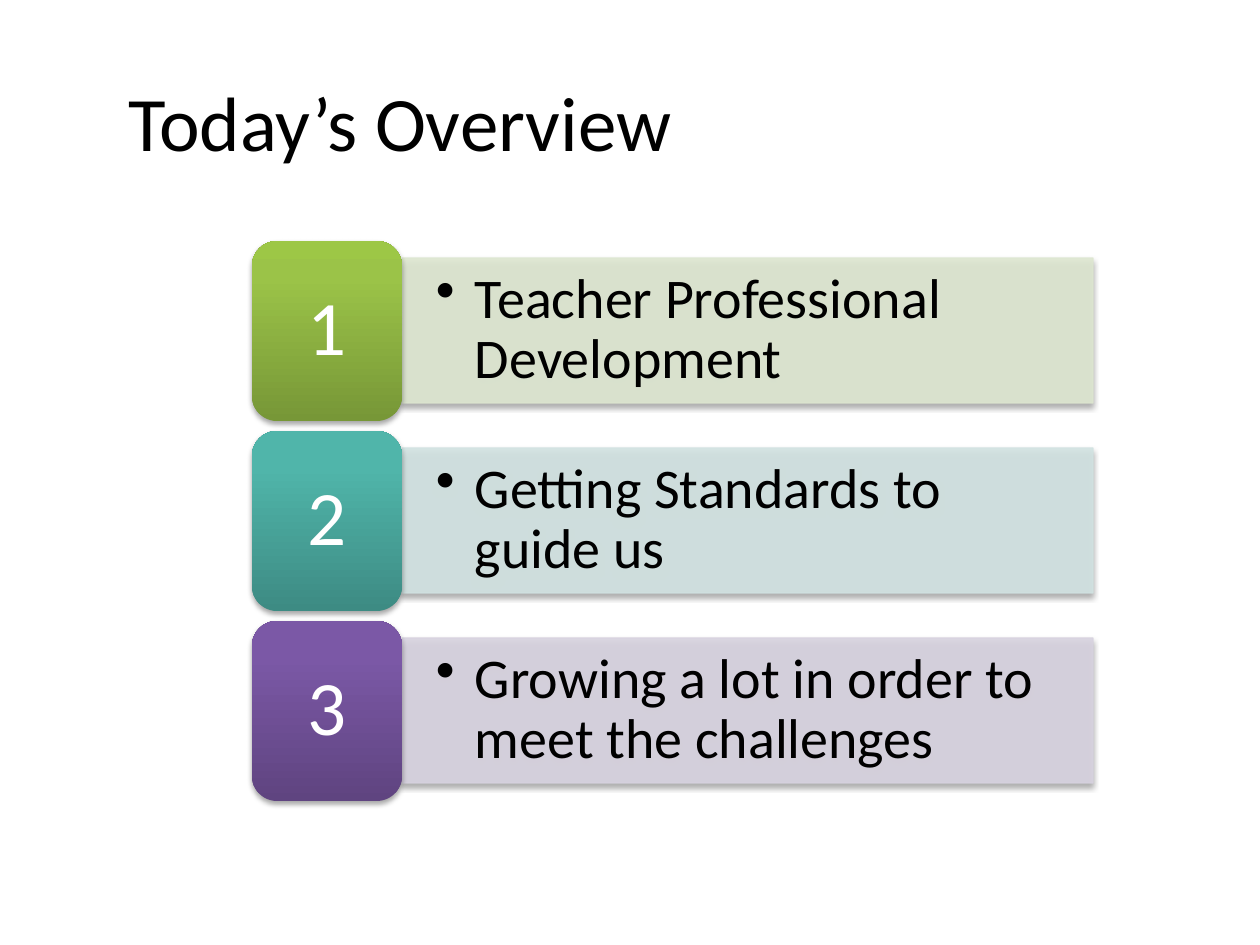
from dataclasses import dataclass

from lxml import etree
from pptx import Presentation
from pptx.dml.color import RGBColor
from pptx.enum.shapes import MSO_SHAPE
from pptx.enum.text import MSO_ANCHOR, PP_ALIGN
from pptx.oxml.ns import qn
from pptx.util import Emu, Pt

RECT, ROUND_RECT = MSO_SHAPE.RECTANGLE, MSO_SHAPE.ROUNDED_RECTANGLE
LEFT, CENTER = PP_ALIGN.LEFT, PP_ALIGN.CENTER
MIDDLE = MSO_ANCHOR.MIDDLE

PX = 914400 // 126
FONT = "Calibri"
FIRST_TOP, STEP = 241, 190
BADGE_LEFT, BADGE_W, BADGE_H = 252, 150, 180
BAR_W, BAR_H = 691, 145
BAR_INSET_X, BAR_INSET_Y, BULLET_INDENT = 34, 17, 39


@dataclass
class Topic:
    text: str
    bar: str
    gradient: tuple[str, str, str]  # from bottom to top


TOPICS = [
    Topic("Teacher Professional Development", "DEE7D1", ("779737", "9BC348", "9DC746")),
    Topic("Getting Standards to guide us", "D2E3E2", ("3D8B83", "50B5AA", "4EB8AC")),
    Topic("Growing a lot in order to meet the challenges", "D8D3E0",
          ("5F4480", "7B58A6", "7C57A8")),
]


def px(n: int) -> Emu:
    return Emu(n * PX)


def rgb(color: str) -> RGBColor:
    return RGBColor.from_string(color)


def sub(parent, tag: str, **attrs):
    return etree.SubElement(parent, qn(tag), {k: str(v) for k, v in attrs.items()})


def add_color(parent, color: str, alpha: int = 100) -> None:
    clr = sub(parent, "a:srgbClr", val=color)
    if alpha < 100:
        sub(clr, "a:alpha", val=alpha * 1000)


def write(sp, text: str, *, size: int, color: str = "000000", align=LEFT,
          spacing: float = 1.0, inset: tuple[int, int] | None = None,
          bullet: bool = False) -> None:
    tf = sp.text_frame
    tf.word_wrap = True
    tf.vertical_anchor = MIDDLE
    if inset:
        tf.margin_left = tf.margin_right = px(inset[0])
        tf.margin_top = tf.margin_bottom = px(inset[1])
    p = tf.paragraphs[0]
    p.alignment = align
    p.line_spacing = spacing
    if bullet:
        pPr = p._p.get_or_add_pPr()
        pPr.set("marL", str(px(BULLET_INDENT)))
        pPr.set("indent", str(-px(BULLET_INDENT)))
        sub(pPr, "a:buChar", char="•")
    r = p.add_run()
    r.text = text
    r.font.name, r.font.size = FONT, Pt(size)
    r.font.color.rgb = rgb(color)


def add_box(s, kind, left: int, top: int, width: int, height: int):
    """Add a shape with a soft shadow below it."""
    sp = s.shapes.add_shape(kind, px(left), px(top), px(width), px(height))
    sp.shadow.inherit = False
    effects = sp._element.spPr.find(qn("a:effectLst"))
    shadow = sub(effects, "a:outerShdw", blurRad=Pt(3.1), dist=Pt(1.8),
                 dir=5400000, rotWithShape=0)
    add_color(shadow, "000000", 35)
    return sp


def add_bar(s, topic: Topic, top: int) -> None:
    sp = add_box(s, RECT, BADGE_LEFT + BADGE_W, top, BAR_W, BAR_H)
    sp.line.width = Pt(0.75)
    for fill in (sp.fill, sp.line.fill):
        fill.solid()
        fill.fore_color.rgb = rgb(topic.bar)
    for clr in sp._element.spPr.iterfind(f".//{qn('a:solidFill')}/{qn('a:srgbClr')}"):
        sub(clr, "a:alpha", val=90000)
    write(sp, topic.text, size=32, spacing=0.9,
          inset=(BAR_INSET_X, BAR_INSET_Y), bullet=True)


def add_badge(s, topic: Topic, number: int, top: int) -> None:
    sp = add_box(s, ROUND_RECT, BADGE_LEFT, top, BADGE_W, BADGE_H)
    sp.line.fill.background()
    sp.fill.gradient()
    sp.fill.gradient_angle = 90
    stops = sp._element.spPr.find(f".//{qn('a:gsLst')}")
    for stop in list(stops):
        stops.remove(stop)
    for pos, color in zip((0, 80, 100), topic.gradient):
        add_color(sub(stops, "a:gs", pos=pos * 1000), color)
    write(sp, str(number), size=44, color="FFFFFF", align=CENTER, spacing=0.9)


def main() -> None:
    prs = Presentation()
    prs.slide_width, prs.slide_height = px(1260), px(945)
    s = prs.slides.add_slide(prs.slide_layouts[5])

    title = s.shapes.title
    title.left, title.top, title.width, title.height = map(px, (116, 42, 1113, 157))
    write(title, "Today’s Overview", size=44)

    for i, topic in enumerate(TOPICS):
        top = FIRST_TOP + i * STEP
        add_bar(s, topic, top + (BADGE_H - BAR_H) // 2)
        add_badge(s, topic, i + 1, top)

    prs.save("out.pptx")


if __name__ == "__main__":
    main()
